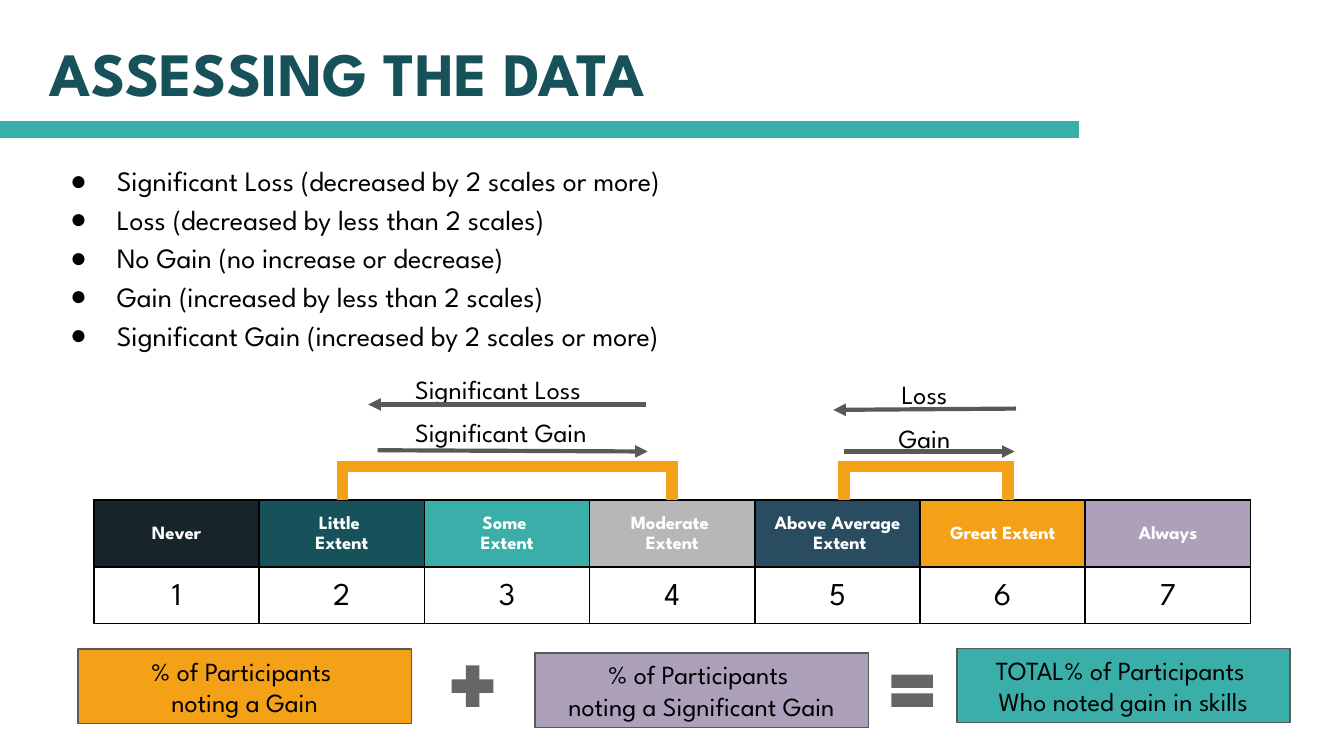
import pptx
import pptx.util
import pptx.dml.color
import pptx.enum.shapes
import pptx.enum.text
import pptx.oxml
from pptx.oxml.ns import nsdecls

Pt = pptx.util.Pt
RGBColor = pptx.dml.color.RGBColor
ALIGN = pptx.enum.text.PP_ALIGN
ANCHOR = pptx.enum.text.MSO_ANCHOR
RECT = pptx.enum.shapes.MSO_SHAPE.RECTANGLE

FONT = "League Spartan"
BLACK = RGBColor(0x00, 0x00, 0x00)
WHITE = RGBColor(0xFF, 0xFF, 0xFF)
INK = RGBColor(0x17, 0x25, 0x2A)
PINE = RGBColor(0x17, 0x52, 0x5A)
TEAL = RGBColor(0x3A, 0xAF, 0xA9)
SILVER = RGBColor(0xB7, 0xB7, 0xB7)
NAVY = RGBColor(0x29, 0x4C, 0x60)
ORANGE = RGBColor(0xF5, 0xA1, 0x18)
MAUVE = RGBColor(0xAC, 0xA0, 0xBB)
ARROW = RGBColor(0x59, 0x59, 0x59)
SIGN = RGBColor(0x66, 0x66, 0x66)

# Content; lengths in points
TITLE = "ASSESSING THE DATA"
RATINGS = [
    "Significant Loss (decreased by 2 scales or more)",
    "Loss (decreased by less than 2 scales)",
    "No Gain (no increase or decrease)",
    "Gain (increased by less than 2 scales)",
    "Significant Gain (increased by 2 scales or more)",
]
SCALE = [
    (["Never"], INK),
    (["Little ", "Extent"], PINE),
    (["Some ", "Extent"], TEAL),
    (["Moderate ", "Extent"], SILVER),
    (["Above Average", " Extent"], NAVY),
    (["Great Extent"], ORANGE),
    (["Always"], MAUVE),
]
LABELS = [  # text, left, top, alignment
    ("Significant Loss", 215.3, 193, ALIGN.LEFT),
    ("Significant Gain", 215.3, 216, ALIGN.LEFT),
    ("Loss", 429.8, 195.8, ALIGN.CENTER),
    ("Gain", 429.8, 218.9, ALIGN.CENTER),
]
ARROWS = [  # from x, from y, to x, to y
    (346.3, 216.7, 197.3, 216.7),
    (202.3, 241.2, 347, 241.9),
    (544.3, 218.9, 446.4, 219.6),
    (452.2, 241.9, 543.6, 241.9),
]
BRACKETS = [(183.6, 360), (452.2, 540)]  # left leg, right leg
BOXES = [  # lines, left, top, fill
    (["% of Participants ", "noting a Gain"], 41.8, 347.8, ORANGE),
    (["% of Participants ", "noting a Significant Gain"], 286.6, 349.9, MAUVE),
    (["TOTAL% of Participants ", "Who noted gain in skills"], 512.6, 347.4, TEAL),
]
SIGN_BARS = [  # left, top, rotation: a plus, then an equals sign
    (242, 364, 0), (242, 364, 90), (477.5, 361.4, 0), (477.5, 371.5, 0),
]
TABLE_LEFT, TABLE_TOP, COL_W = 50.4, 267.8, 88.5
ROW_HEIGHTS = (36, 30.2)
BRACKET_TOP, BRACKET_W = 250, 6


def write(tf, lines, size, color, bold=False, align=ALIGN.LEFT, spacing=1.0):
    for i, line in enumerate(lines):
        p = tf.paragraphs[0] if i == 0 else tf.add_paragraph()
        layout = {"alignment": align, "line_spacing": spacing,
                  "space_before": Pt(0), "space_after": Pt(0)}
        for name, value in layout.items():
            setattr(p, name, value)
        r = p.add_run()
        r.text = line
        for name, value in {"name": FONT, "size": Pt(size), "bold": bold}.items():
            setattr(r.font, name, value)
        r.font.color.rgb = color


def frame(tf, anchor=ANCHOR.TOP):
    settings = {"word_wrap": True, "auto_size": pptx.enum.text.MSO_AUTO_SIZE.NONE,
                "vertical_anchor": anchor}
    for side in ("left", "right", "top", "bottom"):
        settings["margin_" + side] = Pt(7.2)
    for name, value in settings.items():
        setattr(tf, name, value)
    return tf


def place(sp, left, top, width, height):
    sp.left, sp.top, sp.width, sp.height = map(Pt, (left, top, width, height))


def add_line(s, x1, y1, x2, y2, color, width, arrow=False):
    line = s.shapes.add_connector(pptx.enum.shapes.MSO_CONNECTOR.STRAIGHT,
                                  Pt(x1), Pt(y1), Pt(x2), Pt(y2))
    line.line.color.rgb = color
    line.line.width = Pt(width)
    if arrow:
        line.line._get_or_add_ln().append(
            pptx.oxml.parse_xml(f'<a:tailEnd {nsdecls("a")} type="triangle"/>'))
    line._element.spPr.append(pptx.oxml.parse_xml(f'<a:effectLst {nsdecls("a")}/>'))


def add_rect(s, left, top, width, height, fill, outline=None):
    sp = s.shapes.add_shape(RECT, *map(Pt, (left, top, width, height)))
    sp.shadow.inherit = False
    sp.fill.solid()
    sp.fill.fore_color.rgb = fill
    if outline is None:
        sp.line.fill.background()
    else:
        sp.line.color.rgb = outline
        sp.line.width = Pt(0.75)
    return sp


def fill_cell(cell, lines, size, color, bold, fill):
    for side in ("left", "right", "top", "bottom"):
        setattr(cell, "margin_" + side, Pt(5))
    cell.vertical_anchor = ANCHOR.MIDDLE
    cell.fill.solid()
    cell.fill.fore_color.rgb = fill
    write(cell.text_frame, lines, size, color, bold, ALIGN.CENTER, 1.15)
    tcPr = cell._tc.get_or_add_tcPr()
    for i, side in enumerate("LRTB"):
        tcPr.insert(i, pptx.oxml.parse_xml(
            f'<a:ln{side} {nsdecls("a")} w="{Pt(1)}"><a:solidFill>'
            f'<a:srgbClr val="{BLACK}"/></a:solidFill></a:ln{side}>'))


def add_bullets(tf):
    for p in tf.paragraphs:
        pPr = p._p.get_or_add_pPr()
        pPr.set("marL", str(Pt(36)))
        pPr.set("indent", str(-Pt(25)))
        for xml in (f'<a:buClr {nsdecls("a")}><a:srgbClr val="{BLACK}"/></a:buClr>',
                    f'<a:buChar {nsdecls("a")} char="●"/>'):
            pPr.append(pptx.oxml.parse_xml(xml))


prs = pptx.Presentation()
prs.slide_width, prs.slide_height = Pt(720), Pt(405)
s = prs.slides.add_slide(prs.slide_layouts[1])

title, body = s.shapes.title, s.placeholders[1]
place(title, 19.4, 11.5, 694, 54.7)
write(frame(title.text_frame), [TITLE], 33, PINE, bold=True)
place(body, 19.4, 77.8, 382.3, 124.6)
write(frame(body.text_frame), RATINGS, 15, BLACK, spacing=1.15)
add_bullets(body.text_frame)
add_line(s, 0, 69.4, 578.2, 69.4, TEAL, 9)

for text, left, top, align in LABELS:
    sp = s.shapes.add_textbox(*map(Pt, (left, top, 131, 31.7)))
    write(frame(sp.text_frame), [text], 14, BLACK, align=align)

table = s.shapes.add_table(2, len(SCALE), Pt(TABLE_LEFT), Pt(TABLE_TOP),
                           Pt(COL_W * len(SCALE)), Pt(sum(ROW_HEIGHTS))).table
for row, height in zip(table.rows, ROW_HEIGHTS):
    row.height = Pt(height)
for i, (lines, fill) in enumerate(SCALE):
    table.columns[i].width = Pt(COL_W)
    fill_cell(table.cell(0, i), lines, 10, WHITE, True, fill)
    fill_cell(table.cell(1, i), [str(i + 1)], 17, BLACK, False, WHITE)

for legs in BRACKETS:
    for x in legs:
        add_line(s, x, TABLE_TOP, x, BRACKET_TOP - BRACKET_W / 2, ORANGE, BRACKET_W)
    add_line(s, legs[1] + BRACKET_W / 2, BRACKET_TOP,
             legs[0] - BRACKET_W / 2, BRACKET_TOP, ORANGE, BRACKET_W)
for ends in ARROWS:
    add_line(s, *ends, ARROW, 2.25, arrow=True)

for lines, left, top, fill in BOXES:
    sp = add_rect(s, left, top, 178.6, 39.8, fill, ARROW)
    write(frame(sp.text_frame, ANCHOR.MIDDLE), lines, 14, BLACK, align=ALIGN.CENTER)
for left, top, rotation in SIGN_BARS:
    add_rect(s, left, top, 22.3, 7.2, SIGN).rotation = rotation

prs.save("out.pptx")
